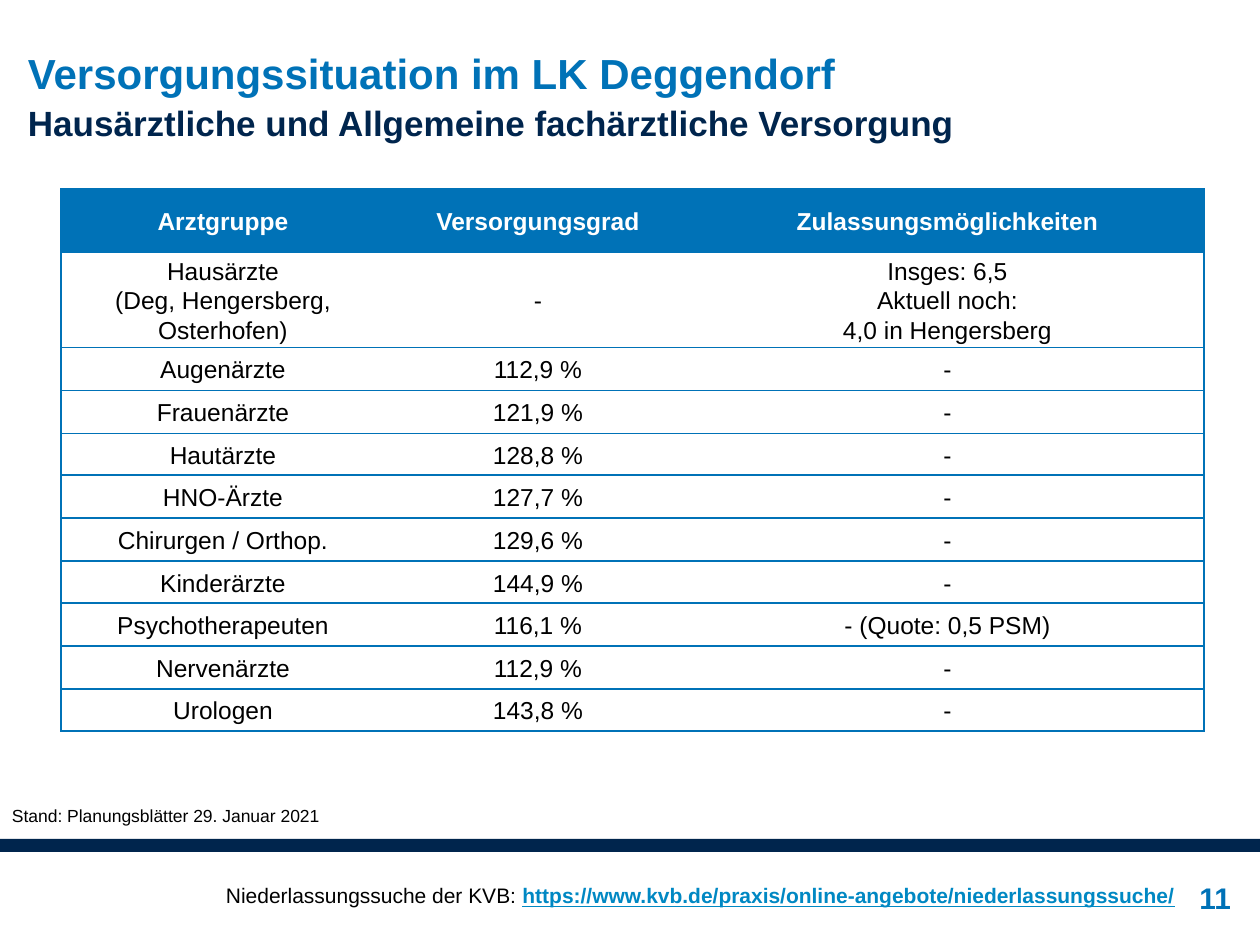
from lxml.etree import SubElement
from pptx import Presentation
from pptx.dml.color import RGBColor
from pptx.enum.shapes import MSO_SHAPE
from pptx.enum.text import MSO_ANCHOR as ANC, PP_ALIGN as AL
from pptx.oxml.ns import qn
from pptx.util import Pt

PX = 914400 // 126
C = {"blue": "0072B7", "navy": "00254D", "link": "0088C3",
     "black": "000000", "white": "FFFFFF"}


def add_run(p, text, size, color, **fmt):
    r = p.add_run()
    r.text = text
    r.font.color.rgb = RGBColor.from_string(C[color])
    for key, value in {"name": "Arial", "size": Pt(size), "bold": False, **fmt}.items():
        setattr(r.font, key, value)


def add_text(box, inset, anchor=ANC.TOP):
    tf = s.shapes.add_textbox(*[v * PX for v in box]).text_frame
    sides = ("margin_left", "margin_top", "margin_right", "margin_bottom")
    margins = {k: v * PX for k, v in zip(sides, inset)}
    for key, value in {"word_wrap": True, "vertical_anchor": anchor, **margins}.items():
        setattr(tf, key, value)
    return tf.paragraphs[0]


prs = Presentation()
prs.slide_width, prs.slide_height = 1260 * PX, 945 * PX
s = prs.slides.add_slide(prs.slide_layouts[6])

# Footer bar and page number
bar = s.shapes.add_shape(MSO_SHAPE.RECTANGLE, 0, 839 * PX, 1260 * PX, 13 * PX)
bar.shadow.inherit = False
bar.fill.solid()
bar.fill.fore_color.rgb = RGBColor.from_string(C["navy"])
bar.line.fill.background()

p = add_text((1165, 851, 66, 94), (4, 0, 0, 0), ANC.MIDDLE)
p.alignment = AL.RIGHT
add_run(p, "11", 17, "blue", bold=True)

# Title and subtitle
p = add_text((28, 44, 1058, 63), (0, 0, 0, 0))
p.line_spacing = 1.08
add_run(p, "Versorgungssituation im LK Deggendorf", 24, "blue", bold=True)
p.add_line_break()
add_run(p, "Hausärztliche und Allgemeine fachärztliche Versorgung", 20, "navy", bold=True)

# Supply table
rows = [
    ("Arztgruppe", "Versorgungsgrad", "Zulassungsmöglichkeiten"),
    ("Hausärzte\n(Deg, Hengersberg, Osterhofen)", "-",
     "Insges: 6,5\nAktuell noch:\n4,0 in Hengersberg"),
    ("Augenärzte", "112,9 %", "-"),
    ("Frauenärzte", "121,9 %", "-"),
    ("Hautärzte", "128,8 %", "-"),
    ("HNO-Ärzte", "127,7 %", "-"),
    ("Chirurgen / Orthop.", "129,6 %", "-"),
    ("Kinderärzte", "144,9 %", "-"),
    ("Psychotherapeuten", "116,1 %", "- (Quote: 0,5 PSM)"),
    ("Nervenärzte", "112,9 %", "-"),
    ("Urologen", "143,8 %", "-"),
]
widths = [324, 306, 513]
heights = [63, 90] + [43, 43, 42] * 3
table = s.shapes.add_table(len(rows), len(widths), 61 * PX, 189 * PX,
                           sum(widths) * PX, sum(heights) * PX).table
for col, w in zip(table.columns, widths):
    col.width = w * PX
for row, h in zip(table.rows, heights):
    row.height = h * PX

cell_format = {"margin_left": PX, "margin_top": PX, "margin_right": PX,
               "margin_bottom": 0, "vertical_anchor": ANC.MIDDLE}
for i, texts in enumerate(rows):
    head = i == 0
    for j, text in enumerate(texts):
        cell = table.cell(i, j)
        for key, value in cell_format.items():
            setattr(cell, key, value)

        # Borders: outer frame and row rules, no inner verticals
        tcPr = cell._tc.get_or_add_tcPr()
        shown = {"lnL": j == 0, "lnR": j == len(widths) - 1, "lnT": True, "lnB": True}
        for side, visible in shown.items():
            ln = SubElement(tcPr, qn("a:" + side), w=str(Pt(1)))
            if visible:
                SubElement(SubElement(ln, qn("a:solidFill")), qn("a:srgbClr"), val=C["blue"])
            else:
                SubElement(ln, qn("a:noFill"))
        cell.fill.solid()
        cell.fill.fore_color.rgb = RGBColor.from_string(C["blue" if head else "white"])

        tf = cell.text_frame
        for k, line in enumerate(text.split("\n")):
            p = tf.add_paragraph() if k else tf.paragraphs[0]
            p.alignment, p.line_spacing = AL.CENTER, 1.07
            add_run(p, line, 14, "white" if head else "black", bold=head)

# Date note and search address
p = add_text((0, 799, 428, 34), (12, 6, 12, 6))
add_run(p, "Stand: Planungsblätter 29. Januar 2021", 10, "black")

p = add_text((214, 877, 1046, 68), (12, 6, 12, 6))
add_run(p, "Niederlassungssuche der KVB: ", 12, "black")
add_run(p, "https://www.kvb.de/praxis/online-angebote/niederlassungssuche/", 12, "link",
        bold=True, underline=True)

prs.save("out.pptx")
